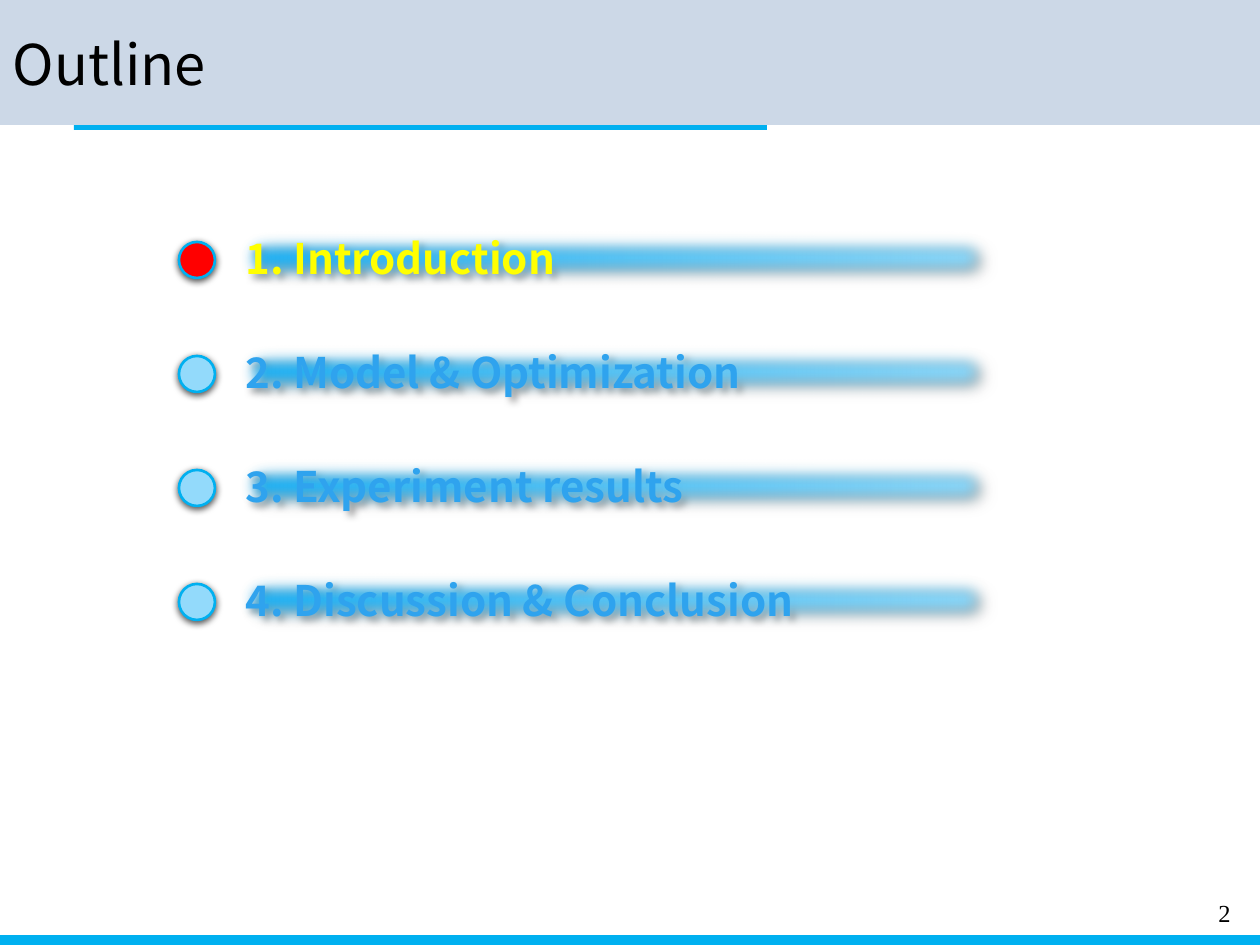
from lxml.etree import SubElement
from pptx import Presentation
from pptx.dml.color import RGBColor
from pptx.enum.shapes import MSO_SHAPE
from pptx.enum.text import MSO_ANCHOR, PP_ALIGN
from pptx.oxml.ns import qn
from pptx.util import Emu, Pt

PX = 914400 // 126
SANS = "Noto Sans CJK SC"
ACCENT = "00B0F0"
ITEMS = ["1. Introduction", "2. Model & Optimization",
         "3. Experiment results", "4. Discussion & Conclusion"]
CURRENT = 0


def px(*lengths):
    """Turn pixel lengths into EMU."""
    return [Emu(n * PX) for n in lengths]


def color(value):
    """Turn a hex string into a colour."""
    return RGBColor.from_string(value)


def add_box(s, kind, box, fill=None, line=None, width=1.5):
    """Add a preset shape without inherited effects."""
    sp = s.shapes.add_shape(kind, *px(*box))
    sp.shadow.inherit = False
    if fill:
        sp.fill.solid()
        sp.fill.fore_color.rgb = color(fill)
    if line:
        sp.line.color.rgb = color(line)
        sp.line.width = Pt(width)
    else:
        sp.line.fill.background()
    return sp


def add_shadow(sp, alpha, distance, angle, soft=0):
    """Add a blurred outer shadow and optional soft edges in points."""
    effects = sp.element.spPr.find(qn("a:effectLst"))
    shadow = SubElement(effects, qn("a:outerShdw"), blurRad=str(Pt(4)),
                        dist=str(Pt(distance)), dir=str(angle * 60000),
                        algn="ctr", rotWithShape="0")
    black = SubElement(shadow, qn("a:srgbClr"), val="000000")
    SubElement(black, qn("a:alpha"), val=str(alpha * 1000))
    if soft:
        SubElement(effects, qn("a:softEdge"), rad=str(Pt(soft)))


def set_text(sp, text, size, fill, name=SANS, bold=False):
    """Write one left-aligned line in the middle of a shape."""
    tf = sp.text_frame
    tf.text = text
    tf.word_wrap = True
    tf.vertical_anchor = MSO_ANCHOR.MIDDLE
    p = tf.paragraphs[0]
    p.alignment = PP_ALIGN.LEFT
    p.font.size = Pt(size)
    p.font.name = name
    p.font.bold = bold
    p.font.color.rgb = color(fill)


def add_header(s, x, y, w, h):
    """Draw the title band with its underline."""
    add_box(s, MSO_SHAPE.RECTANGLE, (x + 74, y + h - 2, 693, 7), ACCENT)
    add_box(s, MSO_SHAPE.RECTANGLE, (x, y, w, h), "CCD8E7")
    title = s.shapes.title
    title.left, title.top, title.width, title.height = px(x, y + 23, 265, 81)
    set_text(title, "Outline", 32, "000000")
    s.shapes.element.append(title.element)


def add_item(s, x, y, w, h, text, current):
    """Draw one outline entry as a dot and a soft bar."""
    dot = add_box(s, MSO_SHAPE.OVAL, (x, y + 16, 36, 36),
                  "FF0000" if current else "93DAFB", ACCENT)
    add_shadow(dot, 68, 1.2, 90)
    bar = add_box(s, MSO_SHAPE.RECTANGLE, (x + 54, y, w - 54, h),
                  line="B5D2E2", width=0.75)
    bar.fill.gradient()
    bar.fill.gradient_angle = 180
    for stop, value in zip(bar.fill.gradient_stops, ("8BD8FA", "18B0F6")):
        stop.color.rgb = color(value)
    add_shadow(bar, 40, 3, 45, soft=10)
    set_text(bar, text, 24, "FFFF00" if current else "2FA3EE", bold=True)


def add_outline(s, x, y, w, pitch):
    """Stack the outline entries at an equal pitch."""
    for i, text in enumerate(ITEMS):
        add_item(s, x, y + i * pitch, w, 63, text, i == CURRENT)


def add_footer(s, x, y, w, h):
    """Draw the page number above the bottom strip."""
    add_box(s, MSO_SHAPE.RECTANGLE, (x, y + h - 9, w, 9), ACCENT, ACCENT, 1.25)
    number = s.shapes.add_textbox(*px(x + w - 54, y, 54, 43))
    set_text(number, "2", 14, "000000", "Times New Roman")


def main():
    """Build and save the outline slide."""
    prs = Presentation()
    prs.slide_width, prs.slide_height = px(1260, 945)
    s = prs.slides.add_slide(prs.slide_layouts[5])
    add_header(s, 0, 0, 1260, 125)
    add_outline(s, 179, 226, 818, 114)
    add_footer(s, 0, 891, 1260, 54)
    prs.save("out.pptx")


if __name__ == "__main__":
    main()
